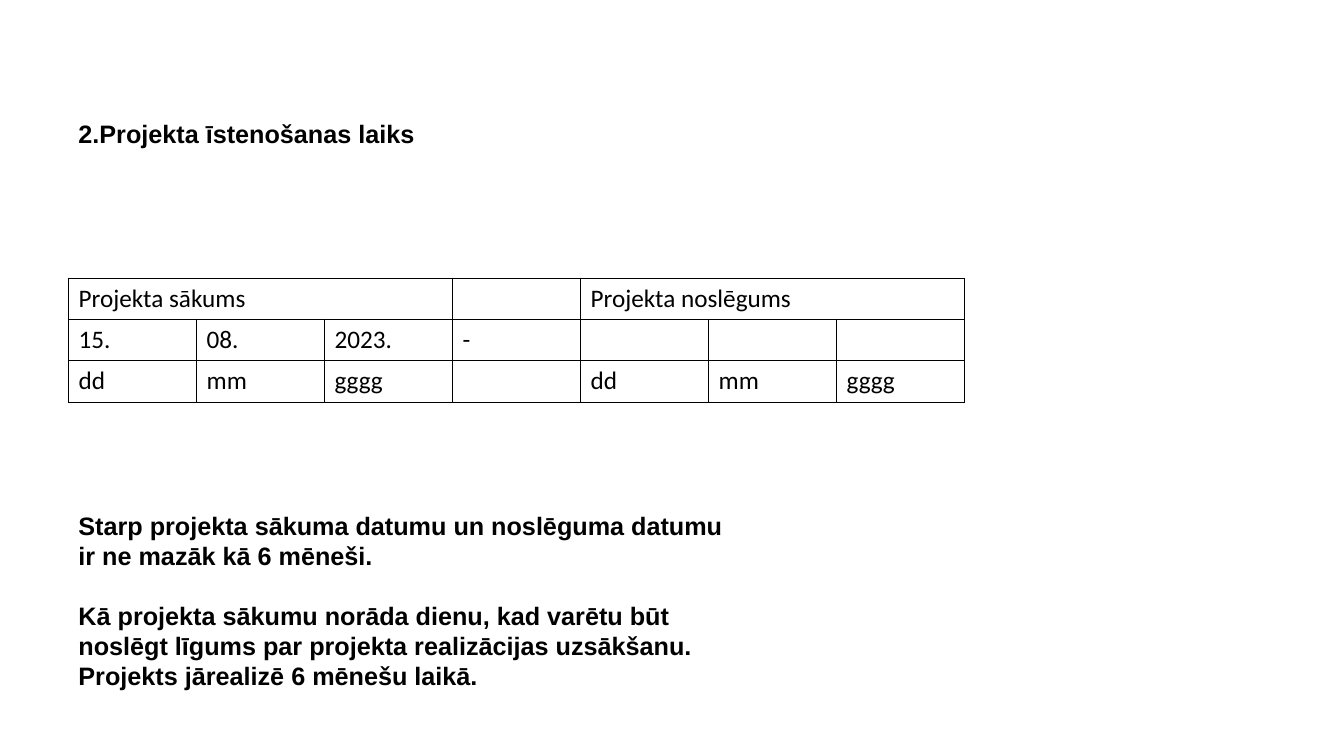
from lxml.etree import SubElement
from pptx import Presentation
from pptx.dml.color import RGBColor
from pptx.enum.text import MSO_AUTO_SIZE
from pptx.oxml.ns import qn
from pptx.util import Inches, Pt

HEADING = ["2.Projekta īstenošanas laiks"]
NOTES = [
    "Starp projekta sākuma datumu un noslēguma datumu ir ne mazāk kā 6 mēneši.",
    "Kā projekta sākumu norāda dienu, kad varētu būt noslēgt līgums par projekta "
    "realizācijas uzsākšanu. Projekts jārealizē 6 mēnešu laikā.",
]
DATES = [
    ["Projekta sākums", "", "", "", "Projekta noslēgums", "", ""],
    ["15.", "08.", "2023.", "-", "", "", ""],
    ["dd", "mm", "gggg", "", "dd", "mm", "gggg"],
]
HEADER_SPANS = [(0, 2), (4, 6)]

COLORS = {"text": "000000", "border": "000000"}
LEFT, TEXT_WIDTH = 0.68, 6.66
COLUMN, ROW = 1.27, 0.41
TABLE_TOP = 2.76
PARAGRAPH_GAP = 21


def add_span(para, text, font, bold=False):
    span = para.add_run()
    span.text = text
    span.font.name = font
    span.font.size = Pt(18)
    span.font.bold = bold
    span.font.color.rgb = RGBColor.from_string(COLORS["text"])


def add_text(page, top, height, paragraphs):
    box = page.shapes.add_textbox(Inches(LEFT), Inches(top), Inches(TEXT_WIDTH), Inches(height))
    frame = box.text_frame
    frame.word_wrap = True
    frame.auto_size = MSO_AUTO_SIZE.SHAPE_TO_FIT_TEXT
    for index, text in enumerate(paragraphs):
        para = frame.add_paragraph() if index else frame.paragraphs[0]
        if index:
            para.space_before = Pt(PARAGRAPH_GAP)
        add_span(para, text, "Arial", bold=True)


def add_borders(cell):
    properties = cell._tc.get_or_add_tcPr()
    for side in ("a:lnL", "a:lnR", "a:lnT", "a:lnB"):
        line = SubElement(properties, qn(side), w=str(Pt(1)))
        fill = SubElement(line, qn("a:solidFill"))
        SubElement(fill, qn("a:srgbClr"), val=COLORS["border"])


def add_dates(page):
    rows, columns = len(DATES), len(DATES[0])
    table = page.shapes.add_table(
        rows, columns, Inches(LEFT), Inches(TABLE_TOP),
        Inches(columns * COLUMN), Inches(rows * ROW)).table
    table.first_row = table.horz_banding = False
    for column in table.columns:
        column.width = Inches(COLUMN)
    for row in table.rows:
        row.height = Inches(ROW)
    for first, last in HEADER_SPANS:
        table.cell(0, first).merge(table.cell(0, last))
    for r, texts in enumerate(DATES):
        for c, text in enumerate(texts):
            cell = table.cell(r, c)
            add_borders(cell)
            cell.fill.background()
            if text:
                add_span(cell.text_frame.paragraphs[0], text, "Calibri")


def main():
    deck = Presentation()
    deck.slide_width, deck.slide_height = Inches(13.33), Inches(7.5)
    page = deck.slides.add_slide(deck.slide_layouts[6])
    add_text(page, 1.12, 0.4, HEADING)
    add_dates(page)
    add_text(page, 5.01, 1.92, NOTES)
    deck.save("out.pptx")


if __name__ == "__main__":
    main()
